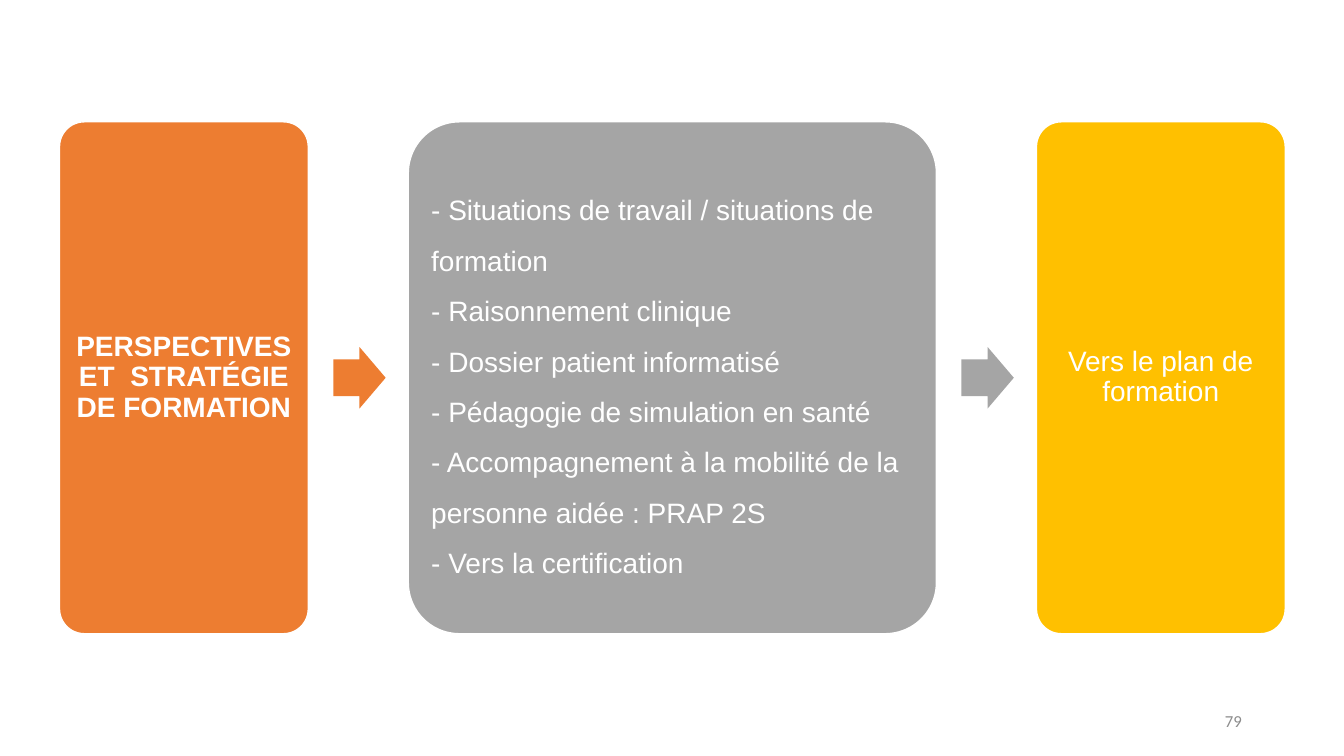
from pptx import Presentation
from pptx.dml.color import RGBColor
from pptx.enum.shapes import MSO_SHAPE
from pptx.enum.text import MSO_ANCHOR, PP_ALIGN
from pptx.util import Cm, Pt

CARD = MSO_SHAPE.ROUNDED_RECTANGLE
ARROW = MSO_SHAPE.RIGHT_ARROW
MIDDLE = MSO_ANCHOR.MIDDLE
LEFT, CENTER, RIGHT = PP_ALIGN.LEFT, PP_ALIGN.CENTER, PP_ALIGN.RIGHT

THEMES = "\n".join([
    "- Situations de travail / situations de formation",
    "- Raisonnement clinique",
    "- Dossier patient informatisé",
    "- Pédagogie de simulation en santé",
    "- Accompagnement à la mobilité de la personne aidée : PRAP 2S",
    "- Vers la certification",
])
STEPS = [
    ("PERSPECTIVES ET  STRATÉGIE DE FORMATION", 6.27, "ED7D31", {"bold": True}),
    (THEMES, 13.31, "A5A5A5", {"align": LEFT, "spacing": 1.5, "after": 14.4}),
    ("Vers le plan de formation", 6.27, "FFC000", {}),
]


def color(value):
    return RGBColor.from_string(value)


def write(frame, text, *, size=20, font="Arial", fill="FFFFFF", bold=False,
          align=CENTER, spacing=0.9, after=7):
    frame.word_wrap = True
    frame.vertical_anchor = MIDDLE
    para = frame.paragraphs[0]
    para.text = text
    para.alignment = align
    para.line_spacing = spacing
    para.space_after = Pt(after)
    for span in para.runs:
        span.font.size = Pt(size)
        span.font.name = font
        span.font.bold = bold
        span.font.color.rgb = color(fill)


class Slide:
    margin, top, height = 1.5, 3.07, 12.9
    gap, arrow_offset = 2.52, 0.63
    arrow_width, arrow_height = 1.32, 1.55
    inset = 0.2

    def __init__(self, deck):
        self.page = deck.slides.add_slide(deck.slide_layouts[6])

    def shape(self, kind, left, top, width, height, fill, adjustments):
        box = self.page.shapes.add_shape(
            kind, Cm(left), Cm(top), Cm(width), Cm(height))
        box.shadow.inherit = False
        box.fill.solid()
        box.fill.fore_color.rgb = color(fill)
        box.line.fill.background()
        for index, value in enumerate(adjustments):
            box.adjustments[index] = value
        return box

    def card(self, left, width, fill, text, **style):
        box = self.shape(CARD, left, self.top, width, self.height, fill, [0.1])
        box.line.color.rgb = color("FFFFFF")
        box.line.width = Pt(1)
        frame = box.text_frame
        frame.margin_left = frame.margin_right = Cm(self.inset)
        frame.margin_top = frame.margin_bottom = Cm(self.inset)
        write(frame, text, **style)

    def arrow(self, left, fill):
        top = self.top + (self.height - self.arrow_height) / 2
        self.shape(ARROW, left, top, self.arrow_width, self.arrow_height,
                   fill, [0.6, 0.5])

    def label(self, left, top, width, height, text, **style):
        box = self.page.shapes.add_textbox(
            Cm(left), Cm(top), Cm(width), Cm(height))
        write(box.text_frame, text, **style)

    def process(self, steps):
        left = self.margin
        for index, (text, width, fill, style) in enumerate(steps):
            self.card(left, width, fill, text, **style)
            left += width
            if index < len(steps) - 1:
                self.arrow(left + self.arrow_offset, fill)
            left += self.gap


def main():
    deck = Presentation()
    deck.slide_width, deck.slide_height = Cm(33.87), Cm(19.05)
    slide = Slide(deck)
    slide.process(STEPS)
    slide.label(23.93, 17.65, 7.62, 1.02, "79", size=12, font="Calibri",
                fill="8C8C8C", align=RIGHT, spacing=1.0, after=0)
    deck.save("out.pptx")


if __name__ == "__main__":
    main()
